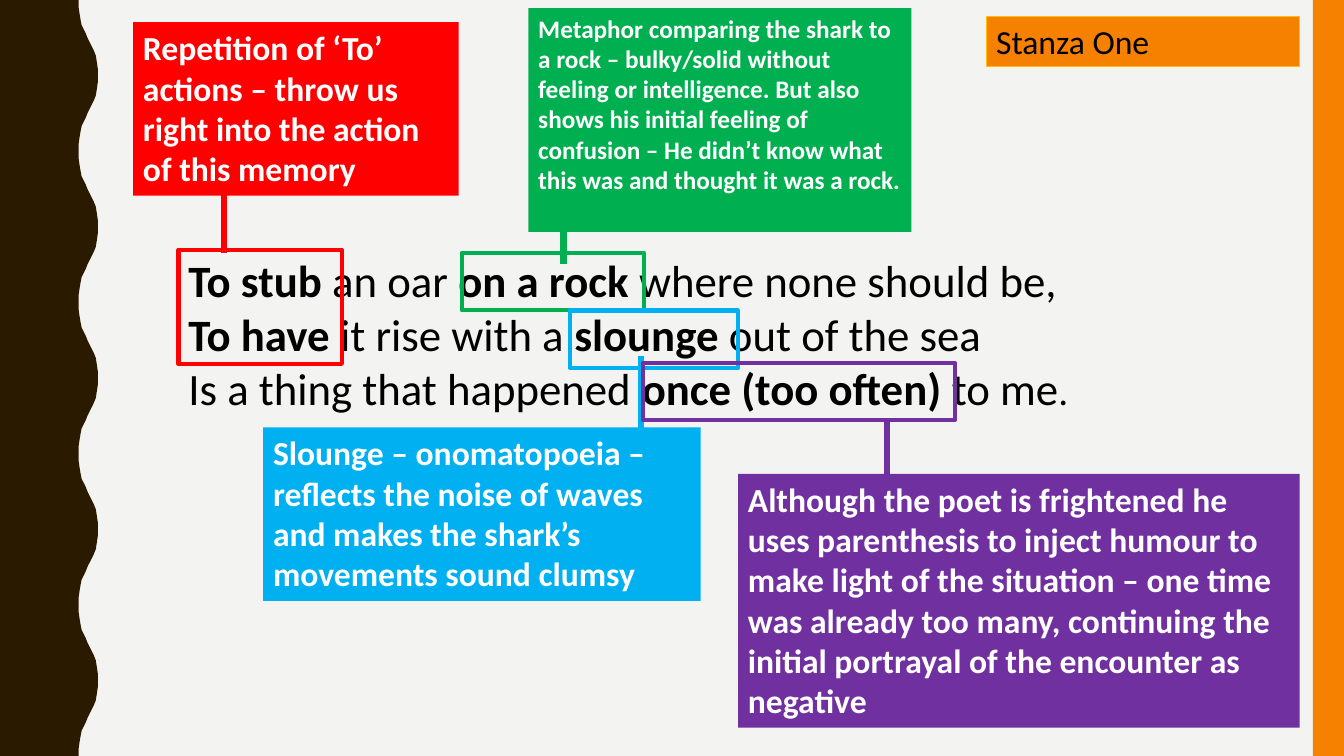
from dataclasses import dataclass

from lxml.etree import SubElement
from pptx import Presentation
from pptx.dml.color import RGBColor
from pptx.enum.shapes import MSO_CONNECTOR as Connector, MSO_SHAPE as Shape
from pptx.enum.text import MSO_ANCHOR as Anchor, MSO_AUTO_SIZE as AutoSize, PP_ALIGN as Align
from pptx.oxml.ns import qn
from pptx.util import Inches, Pt


@dataclass(frozen=True)
class Theme:
    font: str = "Calibri"
    background: str = "F3F3F2"
    brown: str = "2A1A00"
    orange: str = "F68100"
    gold: str = "FFC000"
    red: str = "FF0000"
    green: str = "00B050"
    blue: str = "00B0F0"
    purple: str = "7030A0"
    black: str = "000000"
    white: str = "FFFFFF"
    poem_size: int = 32
    poem_end_size: int = 28
    note_size: int = 24
    small_note_size: int = 18
    title_line: float = 0.75
    frame_line: float = 3
    connector_line: float = 4.5


THEME = Theme()

WAVE_HEIGHT = 1.5
WAVE_RISE = [
    (0.78, 0), (0.78, 0.07), (0.79, 0.14), (0.8, 0.2), (0.81, 0.25),
    (0.83, 0.29), (0.85, 0.33), (0.87, 0.38), (0.89, 0.42), (0.91, 0.46),
    (0.93, 0.5), (0.95, 0.55), (0.96, 0.61), (0.97, 0.68), (0.97, 0.75),
]

POEM = [
    [("To stub ", True), ("an oar ", False), ("on a rock ", True),
     ("where none should be,", False)],
    [("To have ", True), ("it rise with a ", False), ("slounge", True),
     (" out of the sea", False)],
    [("Is a thing that happened ", False), ("once (too often) ", True),
     ("to me", False)],
]

NOTES = [
    ("Repetition of ‘To’ actions – throw us right into the action of this memory",
     (1.32, 0.22, 3.23, 1.72), THEME.red, THEME.note_size),
    ("Metaphor comparing the shark to a rock – bulky/solid without feeling or "
     "intelligence. But also shows his initial feeling of confusion – He didn’t "
     "know what this was and thought it was a rock.",
     (5.24, 0.08, 3.8, 2.22), THEME.green, THEME.small_note_size),
    ("Slounge – onomatopoeia – reflects the noise of waves and makes the shark’s "
     "movements sound clumsy",
     (2.61, 4.24, 4.34, 1.72), THEME.blue, THEME.note_size),
    ("Although the poet is frightened he uses parenthesis to inject humour to make "
     "light of the situation – one time was already too many, continuing the "
     "initial portrayal of the encounter as negative",
     (7.32, 4.7, 5.57, 2.52), THEME.purple, THEME.note_size),
]

CONNECTORS = [
    (2.22, 1.89, 2.51, THEME.red),
    (5.59, 2.25, 2.62, THEME.green),
    (6.36, 3.53, 4.25, THEME.blue),
    (8.8, 4.16, 4.77, THEME.purple),
]

FRAMES = [
    ((1.77, 2.48, 1.62, 1.13), THEME.red),
    ((4.58, 2.51, 1.81, 0.57), THEME.green),
    ((5.65, 3.08, 1.67, 0.57), THEME.blue),
    ((6.38, 3.6, 3.09, 0.57), THEME.purple),
]


def color(value):
    return RGBColor.from_string(value)


def inches(values):
    return [Inches(value) for value in values]


def add_text(paragraph, text, size=THEME.note_size, fill=THEME.black, bold=False):
    paragraph.alignment = Align.LEFT
    run = paragraph.add_run()
    run.text = text
    run.font.name = THEME.font
    run.font.size = Pt(size)
    run.font.bold = bold
    run.font.color.rgb = color(fill)


def prepare_frame(shape):
    frame = shape.text_frame
    frame.word_wrap = True
    frame.auto_size = AutoSize.NONE
    frame.vertical_anchor = Anchor.TOP
    return frame


def paint(shape, fill=None, line=None, width=THEME.frame_line):
    if fill:
        shape.fill.solid()
        shape.fill.fore_color.rgb = color(fill)
    else:
        shape.fill.background()
    if line:
        shape.line.color.rgb = color(line)
        shape.line.width = Pt(width)
    else:
        shape.line.fill.background()


def add_box(slide, bounds, fill=None, line=None):
    shape = slide.shapes.add_shape(Shape.RECTANGLE, *inches(bounds))
    shape.shadow.inherit = False
    paint(shape, fill, line)
    return shape


def add_wavy_edge(slide):
    fall = [(x, WAVE_HEIGHT - y) for x, y in reversed(WAVE_RISE[:-1])]
    points = [
        (x, y + wave * WAVE_HEIGHT)
        for wave in range(5)
        for x, y in WAVE_RISE + fall
    ]
    builder = slide.shapes.build_freeform(0, 0)
    builder.add_line_segments([inches(point) for point in points + [(0, 7.5)]], close=True)
    edge = builder.convert_to_shape()
    edge.shadow.inherit = False
    paint(edge, THEME.brown)


def add_title(slide, text):
    title = slide.shapes.title
    title.left, title.top, title.width, title.height = inches((9.78, 0.16, 3.11, 0.5))
    paint(title, THEME.orange, THEME.gold, THEME.title_line)
    paragraph = prepare_frame(title).paragraphs[0]
    paragraph.line_spacing = 1.0
    paragraph.space_before = Pt(0)
    add_text(paragraph, text)


def add_poem(slide):
    box = slide.shapes.add_textbox(*inches((1.77, 2.46, 9.42, 1.72)))
    frame = prepare_frame(box)
    for index, line in enumerate(POEM):
        paragraph = frame.add_paragraph() if index else frame.paragraphs[0]
        for text, bold in line:
            add_text(paragraph, text, size=THEME.poem_size, bold=bold)
    add_text(paragraph, ".", size=THEME.poem_end_size)


def add_note(slide, text, bounds, fill, size):
    frame = prepare_frame(add_box(slide, bounds, fill))
    add_text(frame.paragraphs[0], text, size=size, fill=THEME.white, bold=True)


def add_vertical_line(slide, x, top, bottom, line):
    connector = slide.shapes.add_connector(
        Connector.STRAIGHT, *inches((x, top, x, bottom)))
    connector.line.color.rgb = color(line)
    connector.line.width = Pt(THEME.connector_line)
    SubElement(connector._element.spPr, qn("a:effectLst"))


def main():
    presentation = Presentation()
    presentation.slide_width = Inches(13.33)
    presentation.slide_height = Inches(7.5)
    slide = presentation.slides.add_slide(presentation.slide_layouts[5])
    slide.background.fill.solid()
    slide.background.fill.fore_color.rgb = color(THEME.background)

    add_wavy_edge(slide)
    add_box(slide, (13.02, 0, 0.31, 7.5), THEME.orange)
    add_title(slide, "Stanza One")
    add_poem(slide)
    for text, bounds, fill, size in NOTES:
        add_note(slide, text, bounds, fill, size)
    for x, top, bottom, line in CONNECTORS:
        add_vertical_line(slide, x, top, bottom, line)
    for bounds, line in FRAMES:
        add_box(slide, bounds, line=line)

    presentation.save("out.pptx")


if __name__ == "__main__":
    main()
